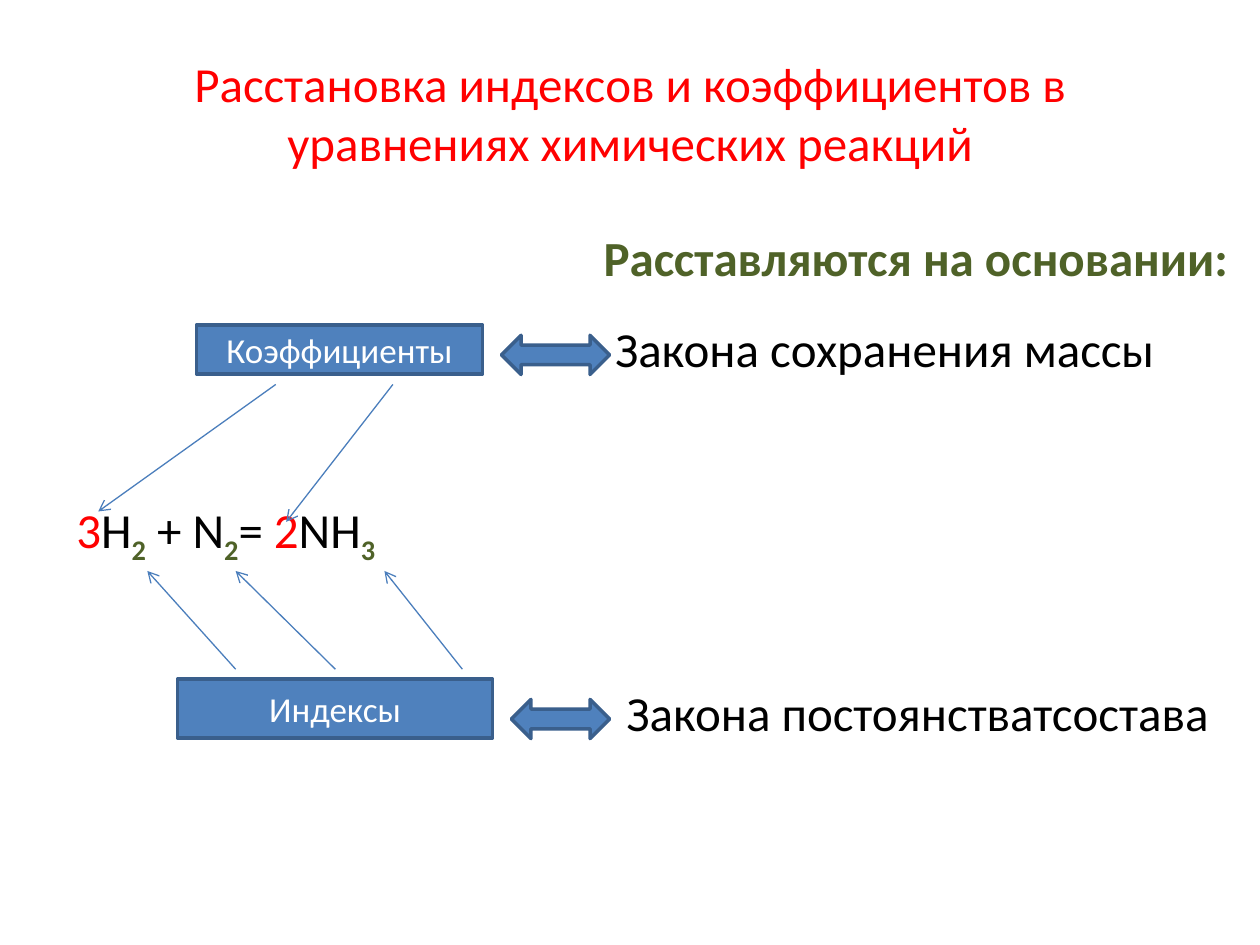
from dataclasses import dataclass
from lxml.etree import SubElement
from pptx import Presentation
from pptx.dml.color import RGBColor as RGB
from pptx.enum.shapes import MSO_CONNECTOR as CONN, MSO_SHAPE as SHAPE
from pptx.enum.text import MSO_ANCHOR as ANCHOR, PP_ALIGN as ALIGN
from pptx.oxml.ns import qn
from pptx.util import Cm, Pt


@dataclass(frozen=True)
class Theme:
    font: str = "Calibri"
    red: RGB = RGB(0xFF, 0, 0)
    green: RGB = RGB(0x4F, 0x62, 0x28)
    black: RGB = RGB(0, 0, 0)
    white: RGB = RGB(0xFF, 0xFF, 0xFF)
    fill: RGB = RGB(0x4F, 0x81, 0xBD)
    outline: RGB = RGB(0x3A, 0x5F, 0x8C)
    arrow: RGB = RGB(0x4B, 0x7E, 0xBC)
    body: Pt = Pt(28)
    label: Pt = Pt(20)


T = Theme()
prs = Presentation()
prs.slide_width, prs.slide_height = Cm(25.4), Cm(19.05)
s = prs.slides.add_slide(prs.slide_layouts[6])


def add_text(x, y, w, h, text, color, bold=False, align=ALIGN.LEFT, inset=0):
    tf = s.shapes.add_textbox(Cm(x), Cm(y), Cm(w), Cm(h)).text_frame
    tf.word_wrap = True
    tf.vertical_anchor = ANCHOR.MIDDLE
    tf.margin_left = tf.margin_right = Cm(inset)
    tf.margin_top = tf.margin_bottom = 0
    p = tf.paragraphs[0]
    p.text, p.alignment = text, align
    p.font.name, p.font.size = T.font, T.body
    p.font.color.rgb, p.font.bold = color, bold
    return p


def add_block(kind, x, y, w, h):
    sp = s.shapes.add_shape(kind, Cm(x), Cm(y), Cm(w), Cm(h))
    sp.shadow.inherit = False
    sp.fill.solid()
    sp.fill.fore_color.rgb = T.fill
    sp.line.color.rgb = T.outline
    sp.line.width = Pt(2)
    return sp


add_text(1.27, 1.57, 22.86, 1.4,
         "Расстановка индексов и коэффициентов в уравнениях химических реакций",
         T.red, align=ALIGN.CENTER, inset=0.25)
add_text(12.17, 4.58, 13.2, 1.2, "Расставляются на основании:", T.green, bold=True)
add_text(12.4, 6.41, 12.9, 1.2, "Закона сохранения массы", T.black)
add_text(12.63, 13.75, 12.7, 1.2, "Закона постоянстватсостава", T.black)

formula = add_text(1.54, 10.14, 9, 1.2, "", T.black)
for kind, text in [("coef", "3"), ("", "H"), ("index", "2"), ("", " + N"), ("index", "2"),
                   ("", "= "), ("coef", "2"), ("", "NH"), ("index", "3")]:
    r = formula.add_run()
    r.text = text
    r.font.size = T.body
    if kind == "coef":
        r.font.color.rgb = T.red
    elif kind == "index":
        r.font.color.rgb = T.green
        r.font.bold = True
        r.font._element.set("baseline", "-25000")

for text, x, y, w, h in [("Коэффициенты", 3.96, 6.55, 5.77, 0.99),
                         ("Индексы", 3.58, 13.69, 6.35, 1.19)]:
    tf = add_block(SHAPE.RECTANGLE, x, y, w, h).text_frame
    tf.vertical_anchor = ANCHOR.MIDDLE
    p = tf.paragraphs[0]
    p.text, p.alignment = text, ALIGN.CENTER
    p.font.name, p.font.size, p.font.color.rgb = T.font, T.label, T.white

for x, y, w in [(10.11, 6.76, 2.18), (10.31, 14.1, 1.98)]:
    add_block(SHAPE.LEFT_RIGHT_ARROW, x, y, w, 0.79)

for x1, y1, x2, y2 in [(5.56, 7.75, 1.98, 10.31), (7.92, 7.75, 5.77, 10.52),
                       (4.75, 13.49, 2.97, 11.51), (6.76, 13.49, 4.75, 11.51),
                       (9.32, 13.49, 7.75, 11.51)]:
    c = s.shapes.add_connector(CONN.STRAIGHT, Cm(x1), Cm(y1), Cm(x2), Cm(y2))
    c.line.color.rgb = T.arrow
    c.line.width = Pt(0.75)
    SubElement(c.line._get_or_add_ln(), qn("a:tailEnd"), type="arrow")
    SubElement(c._element.spPr, qn("a:effectLst"))

prs.save("out.pptx")
